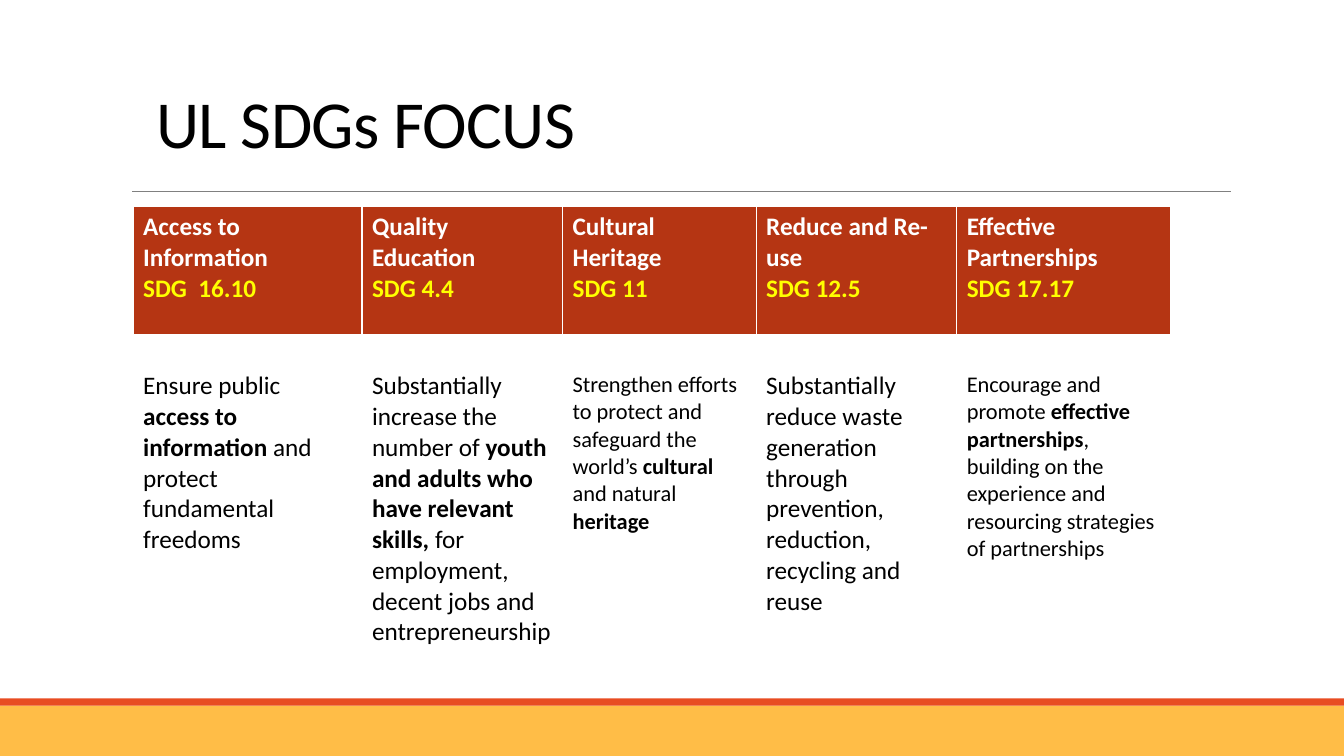
from lxml import etree
from pptx import Presentation
from pptx import util as u
from pptx.dml.color import RGBColor
from pptx.enum import shapes, text
from pptx.oxml import ns

FONT = "Calibri"
BLACK = RGBColor(0x00, 0x00, 0x00)
WHITE = RGBColor(0xFF, 0xFF, 0xFF)
YELLOW = RGBColor(0xFF, 0xFF, 0x00)
GREY = RGBColor(0x80, 0x80, 0x80)
RUST = RGBColor(0xB5, 0x35, 0x13)
AMBER = RGBColor(0xFF, 0xBD, 0x47)
ORANGE = RGBColor(0xE8, 0x4C, 0x22)

# Each goal: width, heading, SDG number, body size, body runs (text, bold)
GOALS = [
    (2.27, "Access to Information", "SDG  16.10", 18,
     [("Ensure public ", False), ("access to information ", True),
      ("and protect fundamental freedoms", False)]),
    (1.99, "Quality Education", "SDG 4.4", 18,
     [("Substantially increase the number of ", False),
      ("youth and adults who have relevant skills, ", True),
      ("for employment, decent jobs and entrepreneurship", False)]),
    (1.92, "Cultural Heritage", "SDG 11", 16,
     [("Strengthen efforts to protect and safeguard the world’s ", False),
      ("cultural ", True), ("and natural ", False), ("heritage", True)]),
    (1.99, "Reduce and Re-use", "SDG 12.5", 18,
     [("Substantially reduce waste generation through prevention, "
       "reduction, recycling and reuse", False)]),
    (2.12, "Effective Partnerships", "SDG 17.17", 16,
     [("Encourage and promote ", False), ("effective partnerships", True),
      (", building on the experience and resourcing strategies of "
       "partnerships", False)]),
]


class Deck:
    def __init__(self):
        self.prs = Presentation()
        self.prs.slide_width = u.Inches(13.33)
        self.prs.slide_height = u.Inches(7.5)
        self.s = self.prs.slides.add_slide(self.prs.slide_layouts[6])

    def run(self, p, words, size, color, bold=False):
        r = p.add_run()
        r.text = words
        r.font.name, r.font.size, r.font.bold = FONT, u.Pt(size), bold
        r.font.color.rgb = color
        return r

    def band(self, top, height, color):
        sp = self.s.shapes.add_shape(
            shapes.MSO_SHAPE.RECTANGLE, 0, u.Inches(top),
            self.prs.slide_width, u.Inches(height))
        sp.shadow.inherit = False
        sp.fill.solid()
        sp.fill.fore_color.rgb = color
        sp.line.fill.background()

    def rule(self, x1, x2, y):
        line = self.s.shapes.add_connector(
            shapes.MSO_CONNECTOR.STRAIGHT,
            u.Inches(x1), u.Inches(y), u.Inches(x2), u.Inches(y))
        line.line.color.rgb = GREY
        line.line.width = u.Pt(0.5)
        etree.SubElement(line._element.spPr, ns.qn("a:effectLst"))

    def title(self, words, left, top, width, height):
        sp = self.s.shapes.add_textbox(*map(u.Inches, (left, top, width, height)))
        tf = sp.text_frame
        tf.word_wrap = True
        tf.vertical_anchor = text.MSO_ANCHOR.BOTTOM
        p = tf.paragraphs[0]
        p.line_spacing = 0.85
        r = self.run(p, words, 48, BLACK)
        r.font._element.set("spc", "-50")

    def cell(self, cell, color, bottom):
        # Borders come before the fill in the cell properties
        tcPr = cell._tc.get_or_add_tcPr()
        for side, width in (("L", 1), ("R", 1), ("T", 1), ("B", bottom)):
            ln = etree.SubElement(tcPr, ns.qn("a:ln" + side), w=str(u.Pt(width)))
            fill = etree.SubElement(ln, ns.qn("a:solidFill"))
            etree.SubElement(fill, ns.qn("a:srgbClr"), val=str(WHITE))
        cell.fill.solid()
        cell.fill.fore_color.rgb = color

    def goals_table(self, goals, left, top, heights):
        width = sum(goal[0] for goal in goals)
        table = self.s.shapes.add_table(
            len(heights), len(goals), u.Inches(left), u.Inches(top),
            u.Inches(width), u.Inches(sum(heights))).table
        for row, height in zip(table.rows, heights):
            row.height = u.Inches(height)
        for i, (width, heading, number, size, body) in enumerate(goals):
            table.columns[i].width = u.Inches(width)
            head, detail = table.cell(0, i), table.cell(1, i)
            self.cell(head, RUST, 3)
            self.cell(detail, WHITE, 1)
            tf = head.text_frame
            self.run(tf.paragraphs[0], heading, 18, WHITE, True)
            self.run(tf.add_paragraph(), number, 18, YELLOW, True)
            detail.margin_top = u.Inches(0.35)
            for words, bold in body:
                self.run(detail.text_frame.paragraphs[0], words, size, BLACK, bold)


def main():
    deck = Deck()
    # Footer bands
    deck.band(7, 0.5, AMBER)
    deck.band(6.93, 0.07, ORANGE)
    # Title and rule
    deck.rule(1.31, 12.21, 1.9)
    deck.title(" UL SDGs FOCUS", 1.31, 0.09, 11.02, 1.57)
    # Goals
    deck.goals_table(GOALS, 1.32, 2.05, (1.28, 3.28))
    deck.prs.save("out.pptx")


if __name__ == "__main__":
    main()
